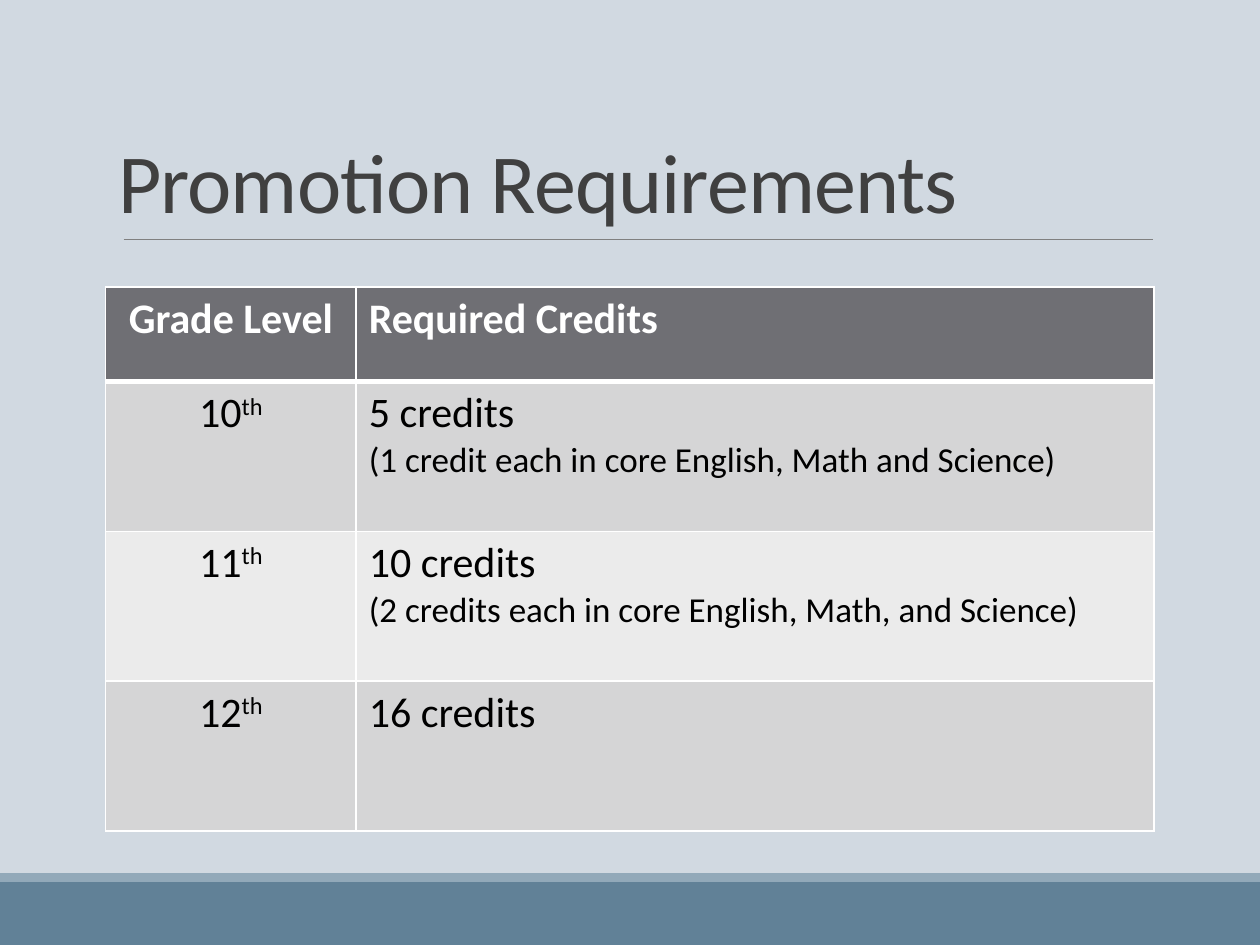
from dataclasses import dataclass

import pptx
import pptx.dml.color
import pptx.enum.shapes
import pptx.enum.text
import pptx.oxml.ns
import pptx.util
from lxml import etree
from pptx.util import Cm, Pt

FONT = "Calibri"
WHITE, BLACK = "FFFFFF", "000000"


@dataclass
class Band:
    top: float
    height: float
    color: str


@dataclass
class Row:
    grade: str
    suffix: str
    credits: list[str]
    height: float
    fill: str
    color: str = BLACK
    bold: bool = False
    top_pt: int = 1
    bottom_pt: int = 1


BANDS = [Band(17.78, 1.27, "618197"), Band(17.6, 0.18, "92A9B9")]
COLUMNS = [5.05, 16.08]
ROWS = [
    Row("Grade Level", "", ["Required Credits"], 1.9, "6F6F74", WHITE, True, bottom_pt=3),
    Row("10", "th", ["5 credits", "(1 credit each in core English, Math and Science)"],
        3.02, "D5D5D6", top_pt=3),
    Row("11", "th", ["10 credits", "(2 credits each in core English, Math, and Science)"],
        3.02, "EBEBEB"),
    Row("12", "th", ["16 credits"], 3.02, "D5D5D6"),
]


def rgb(value: str) -> pptx.dml.color.RGBColor:
    return pptx.dml.color.RGBColor.from_string(value)


def paint(target, color: str) -> None:
    target.fill.solid()
    target.fill.fore_color.rgb = rgb(color)


def set_font(p, size: float, color: str, bold: bool = False) -> None:
    p.font.name = FONT
    p.font.size = Pt(size)
    p.font.bold = bold
    p.font.color.rgb = rgb(color)


def add_band(s, band: Band, width: int) -> None:
    sp = s.shapes.add_shape(pptx.enum.shapes.MSO_SHAPE.RECTANGLE,
                            0, Cm(band.top), width, Cm(band.height))
    sp.shadow.inherit = False
    sp.line.fill.background()
    paint(sp, band.color)


def add_rule(s) -> None:
    line = s.shapes.add_connector(pptx.enum.shapes.MSO_CONNECTOR.STRAIGHT,
                                  Cm(2.49), Cm(4.83), Cm(23.24), Cm(4.83))
    line.line.color.rgb = rgb("808080")
    line.line.width = Pt(0.5)
    etree.SubElement(line._element.spPr, pptx.oxml.ns.qn("a:effectLst"))


def add_title(s, text: str) -> None:
    tf = s.shapes.add_textbox(Cm(2.13), Cm(0.84), Cm(20.24), Cm(3.94)).text_frame
    tf.word_wrap = True
    tf.vertical_anchor = pptx.enum.text.MSO_ANCHOR.BOTTOM
    p = tf.paragraphs[0]
    p.line_spacing = 0.85
    r = p.add_run()
    r.text = text
    set_font(p, 48, "404040")
    r.font._element.set("spc", "-50")


def set_borders(cell, row: Row) -> None:
    qn = pptx.oxml.ns.qn
    tc_pr = cell._tc.get_or_add_tcPr()
    for side, width in (("L", 1), ("R", 1), ("T", row.top_pt), ("B", row.bottom_pt)):
        ln = etree.SubElement(tc_pr, qn(f"a:ln{side}"), w=str(Pt(width)))
        fill = etree.SubElement(ln, qn("a:solidFill"))
        etree.SubElement(fill, qn("a:srgbClr"), val=WHITE)


def fill_row(cells, row: Row) -> None:
    for cell in cells:
        set_borders(cell, row)
        paint(cell, row.fill)

    # Grade with its raised ordinal suffix
    p = cells[0].text_frame.paragraphs[0]
    p.alignment = pptx.enum.text.PP_ALIGN.CENTER
    p.add_run().text = row.grade
    if row.suffix:
        r = p.add_run()
        r.text = row.suffix
        r.font._element.set("baseline", "30000")
    set_font(p, 24, row.color, row.bold)

    # Credits, with a smaller detail line below
    tf = cells[1].text_frame
    tf.text = "\n".join(row.credits)
    for p, size in zip(tf.paragraphs, (24, 20)):
        set_font(p, size, row.color, row.bold)


def add_credit_table(s) -> None:
    table = s.shapes.add_table(len(ROWS), len(COLUMNS), Cm(2.13), Cm(5.79),
                               Cm(sum(COLUMNS)), Cm(sum(r.height for r in ROWS))).table
    for column, width in zip(table.columns, COLUMNS):
        column.width = Cm(width)
    for table_row, row in zip(table.rows, ROWS):
        table_row.height = Cm(row.height)
        fill_row(list(table_row.cells), row)


def main() -> None:
    prs = pptx.Presentation()
    prs.slide_width, prs.slide_height = Cm(25.4), Cm(19.05)
    s = prs.slides.add_slide(prs.slide_layouts[6])

    # Background and footer bands
    paint(s.background, "D1D9E1")
    for band in BANDS:
        add_band(s, band, prs.slide_width)

    # Heading and table
    add_rule(s)
    add_title(s, "Promotion Requirements")
    add_credit_table(s)
    prs.save("out.pptx")


if __name__ == "__main__":
    main()
